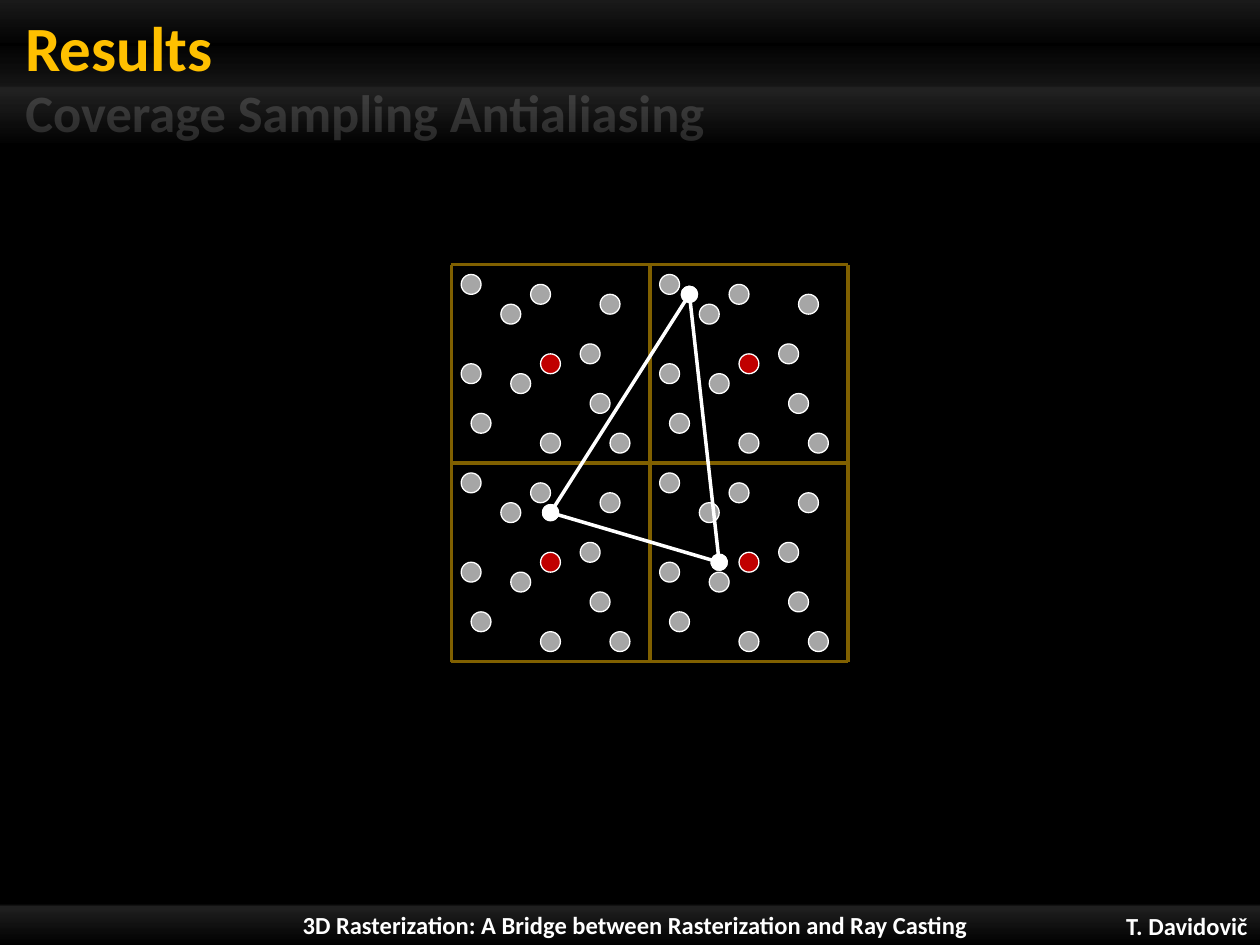
from lxml import etree
from pptx import Presentation
from pptx.dml.color import RGBColor
from pptx.enum.shapes import MSO_CONNECTOR, MSO_SHAPE
from pptx.enum.text import MSO_ANCHOR, MSO_AUTO_SIZE, PP_ALIGN
from pptx.oxml import parse_xml
from pptx.oxml.ns import nsdecls, qn
from pptx.util import Pt

BLACK = RGBColor(0x00, 0x00, 0x00)
WHITE = RGBColor(0xFF, 0xFF, 0xFF)
GOLD = RGBColor(0xFF, 0xC0, 0x00)
BROWN = RGBColor(0x80, 0x60, 0x00)
RED = RGBColor(0xC0, 0x00, 0x00)
GRAY = RGBColor(0xA6, 0xA6, 0xA6)

# The pixel grid: each cell is 20 units wide
LEFT, TOP, UNIT, CELL = 257.9, 151.2, 5.67, 20
SPAN = 2 * CELL
SAMPLES = [(16, 4), (15, 14), (3, 16), (6, 5), (2, 2), (9, 3),
           (7, 12), (17, 18), (2, 11), (14, 9), (10, 18)]
CORNERS = [(24, 3), (10, 25), (27, 30)]

# Gradient stops: position and opacity of white, in percent
FOOT = [(5, 0), (10, 8), (11, 13), (100, 0)]
HEAD = [(0, 10), (31, 0), (60, 8), (61, 13), (100, 0)]
FADE = [(0, 15), (75, 100)]


def put(item, values):
    for name, value in values.items():
        setattr(item, name, value)


def fade(fill, node, stops):
    """Give node a downward gradient of white with varying opacity."""
    fill.gradient()
    marks = "".join(
        f'<a:gs pos="{pos * 1000}"><a:srgbClr val="{WHITE}">'
        f'<a:alpha val="{alpha * 1000}"/></a:srgbClr></a:gs>'
        for pos, alpha in stops)
    new = parse_xml(f'<a:gradFill {nsdecls("a")} rotWithShape="1"><a:gsLst>{marks}'
                    '</a:gsLst><a:lin ang="5400000" scaled="0"/></a:gradFill>')
    node.replace(node.find(qn("a:gradFill")), new)


class Board:
    """Holds the text style and the current slide."""

    font = {"name": "Calibri", "bold": True}

    def __init__(self, slide):
        self.slide = slide
        self.shapes = slide.shapes
        slide.background.fill.solid()
        slide.background.fill.fore_color.rgb = BLACK

    def bar(self, top, high, stops):
        bar = self.shapes.add_shape(
            MSO_SHAPE.RECTANGLE, Pt(0), Pt(top), Pt(720), Pt(high))
        bar.shadow.inherit = False
        bar.line.fill.background()
        fade(bar.fill, bar.element.spPr, stops)

    def text(self, box, words, size, color, align, frame):
        put(box.text_frame, {"word_wrap": True,
                             "auto_size": MSO_AUTO_SIZE.NONE, **frame})
        para = box.text_frame.paragraphs[0]
        put(para, {"alignment": align, "space_before": Pt(0)})
        run = para.add_run()
        run.text = words
        put(run.font, {**self.font, "size": Pt(size)})
        run.font.color.rgb = color
        return para, run

    def label(self, words, left, top, wide, high, align):
        box = self.shapes.add_textbox(Pt(left), Pt(top), Pt(wide), Pt(high))
        self.text(box, words, 14, WHITE, align,
                  {"vertical_anchor": MSO_ANCHOR.MIDDLE})

    def holder(self, box, words, size, color, area, inset, anchor):
        """Place and fill a placeholder in front of the bars."""
        self.shapes.element.append(box.element)
        put(box, dict(zip(("left", "top", "width", "height"), map(Pt, area))))
        frame = {"vertical_anchor": anchor, "margin_left": Pt(inset),
                 "margin_right": Pt(7.2), "margin_top": 0, "margin_bottom": 0}
        return self.text(box, words, size, color, PP_ALIGN.LEFT, frame)

    def title(self, words):
        self.holder(self.shapes.title, words, 36, GOLD,
                    (0, 0, 592.6, 48.2), 14.4, MSO_ANCHOR.BOTTOM)

    def topic(self, words):
        para, run = self.holder(self.slide.placeholders[1], words, 30, WHITE,
                                (0, 46.8, 483, 33.8), 9.4, MSO_ANCHOR.MIDDLE)
        props = para._p.get_or_add_pPr()
        props.set("marL", str(Pt(35.3)))
        props.set("indent", str(Pt(-30.2)))
        etree.SubElement(props, qn("a:buNone"))
        fade(run.font.fill, run.font._element, FADE)

    def dot(self, group, col, row, color):
        """Draw a sample centred on a grid point."""
        dot = group.add_shape(
            MSO_SHAPE.OVAL, Pt(LEFT + (col - 1) * UNIT),
            Pt(TOP + (row - 1) * UNIT), Pt(2 * UNIT), Pt(2 * UNIT))
        dot.shadow.inherit = False
        dot.fill.solid()
        dot.fill.fore_color.rgb = color
        dot.line.color.rgb = WHITE
        dot.line.width = Pt(0.75)

    def line(self, start, end, color, ends=False):
        (x1, y1), (x2, y2) = start, end
        line = self.shapes.add_connector(
            MSO_CONNECTOR.STRAIGHT, Pt(LEFT + x1 * UNIT), Pt(TOP + y1 * UNIT),
            Pt(LEFT + x2 * UNIT), Pt(TOP + y2 * UNIT))
        line.line.color.rgb = color
        line.line.width = Pt(2)
        props = line.element.spPr
        if ends:
            for tag in ("a:headEnd", "a:tailEnd"):
                etree.SubElement(props.find(qn("a:ln")), qn(tag),
                                 type="oval", w="lg", len="lg")
        etree.SubElement(props, qn("a:effectLst"))


def main():
    deck = Presentation()
    put(deck, {"slide_width": Pt(720), "slide_height": Pt(540)})
    board = Board(deck.slides.add_slide(deck.slide_layouts[1]))

    board.bar(515.5, 24.5, FOOT)
    board.bar(0, 82.1, HEAD)
    board.label("T. Davidovič", 586.8, 517.7, 133.2, 22.3, PP_ALIGN.RIGHT)
    board.label("3D Rasterization: A Bridge between Rasterization and Ray Casting",
                100.8, 516.2, 524.2, 24.5, PP_ALIGN.CENTER)
    board.title("Results")
    board.topic("Coverage Sampling Antialiasing")

    for pos in (0, CELL, SPAN):
        board.line((0, pos), (SPAN, pos), BROWN)
        board.line((pos, 0), (pos, SPAN), BROWN)

    for left in (0, CELL):
        for top in (0, CELL):
            board.dot(board.shapes, left + CELL / 2, top + CELL / 2, RED)
            group = board.shapes.add_group_shape().shapes
            for col, row in SAMPLES:
                board.dot(group, left + col, top + row, GRAY)

    for start, end in zip(CORNERS, CORNERS[1:] + CORNERS[:1]):
        board.line(start, end, WHITE, ends=True)

    deck.save("out.pptx")


if __name__ == "__main__":
    main()
